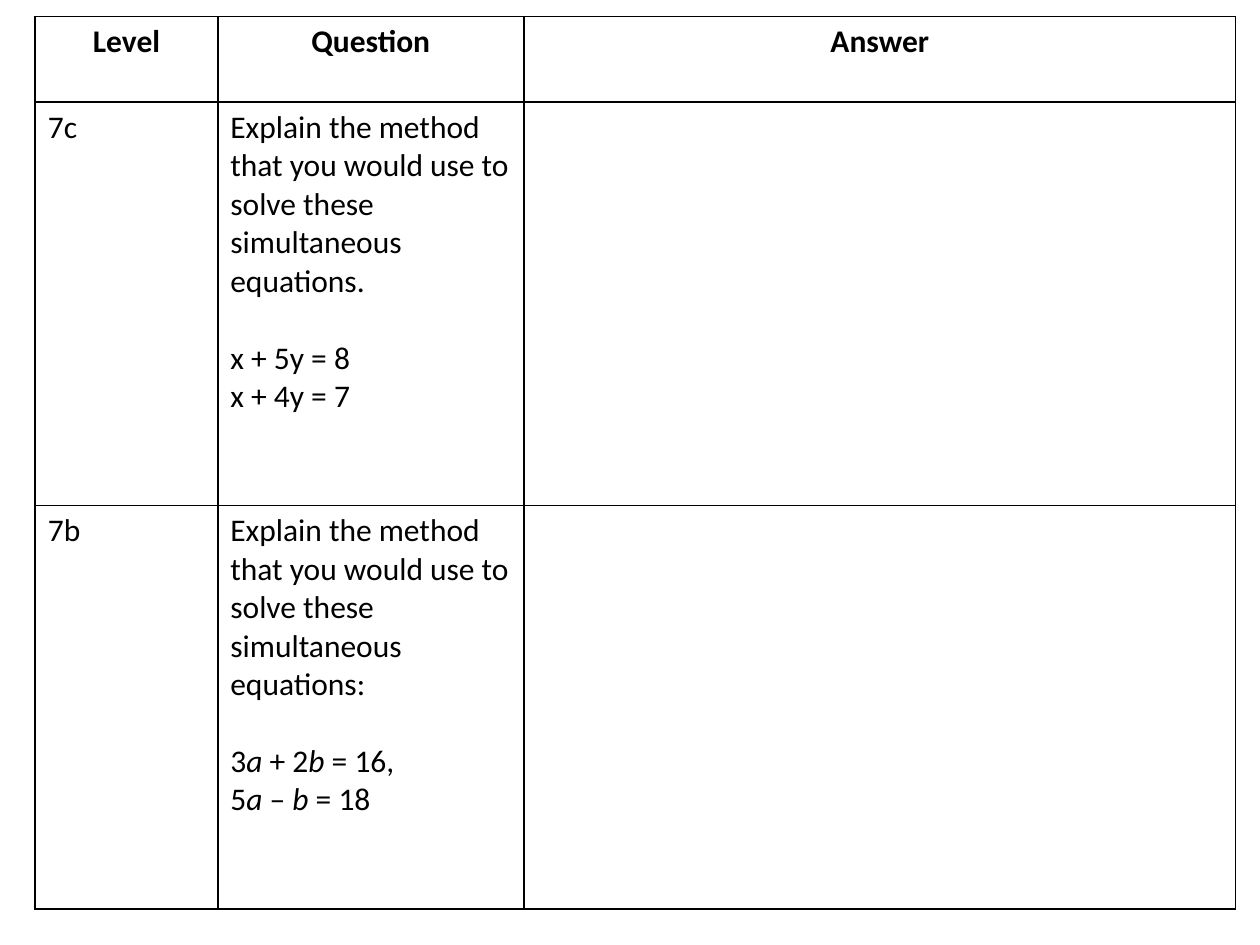
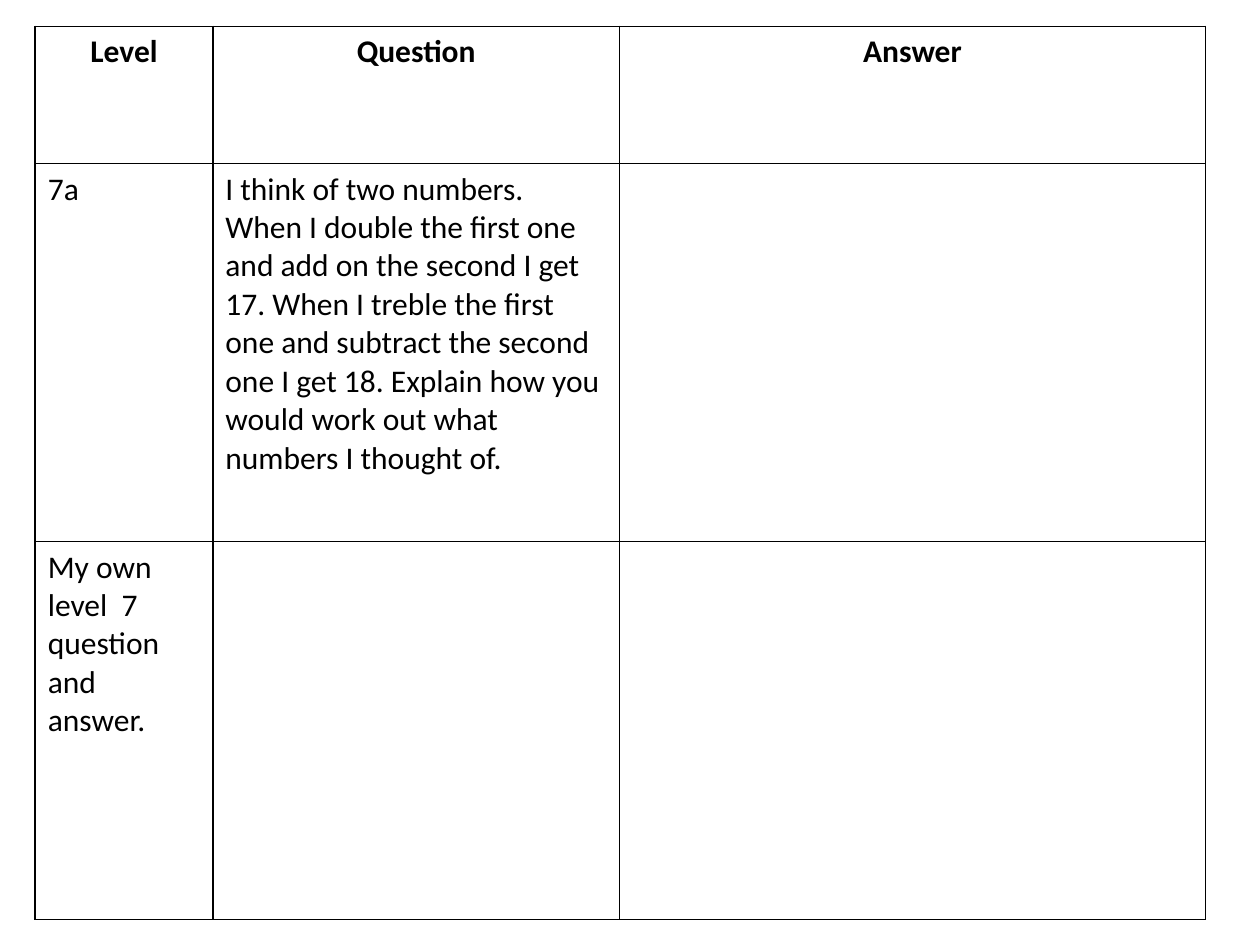
"""Build two level 7 simultaneous equation worksheets, each a question and answer table."""
from lxml.etree import SubElement
from pptx import Presentation
from pptx.dml.color import RGBColor
from pptx.enum.text import PP_ALIGN
from pptx.oxml.ns import qn
from pptx.util import Cm, Pt

COLOURS = {"ink": "000000", "paper": "FFFFFF"}
HEADINGS = ["Level", "Question", "Answer"]
METHOD_PROMPT = "Explain the method that you would use to solve these simultaneous equations"
NUMBER_PUZZLE = (
    "I think of two numbers. When I double the first one and add on the second I get 17. "
    "When I treble the first one and subtract the second one I get 18. "
    "Explain how you would work out what numbers I thought of."
)


class Worksheet:
    def __init__(self, deck):
        self.deck = deck
        self.font = "Calibri"
        self.size = Pt(18)
        self.equation_gap = Pt(22)
        self.border = Pt(1)
        self.slide = None

    def add_slide(self):
        self.slide = self.deck.slides.add_slide(self.deck.slide_layouts[6])

    def add_run(self, paragraph, text, bold=False, italic=False):
        run = paragraph.add_run()
        run.text = text
        run.font.name = self.font
        run.font.size = self.size
        run.font.bold = bold
        run.font.italic = italic
        run.font.color.rgb = RGBColor.from_string(COLOURS["ink"])

    def draw_borders(self, cell):
        properties = cell._tc.get_or_add_tcPr()
        for side in ("lnL", "lnR", "lnT", "lnB"):
            edge = SubElement(properties, qn(f"a:{side}"), w=str(self.border))
            ink = SubElement(edge, qn("a:solidFill"))
            SubElement(ink, qn("a:srgbClr"), val=COLOURS["ink"])

    def fill_cell(self, cell, lines, heading=False):
        self.draw_borders(cell)
        cell.fill.solid()
        cell.fill.fore_color.rgb = RGBColor.from_string(COLOURS["paper"])
        for number, line in enumerate(lines):
            frame = cell.text_frame
            paragraph = frame.add_paragraph() if number else frame.paragraphs[0]
            if heading:
                paragraph.alignment = PP_ALIGN.CENTER
            if number == 1:
                paragraph.space_before = self.equation_gap
            for position, text in enumerate(line):
                self.add_run(paragraph, text, bold=heading, italic=position % 2 == 1)

    def add_questions(self, top, widths, heights, questions):
        """Draw the grid; the runs of a line alternate between upright and italic."""
        grid = self.slide.shapes.add_table(
            len(heights), len(widths), Cm(0.71), Cm(top), Cm(sum(widths)), Cm(sum(heights))
        ).table
        grid.first_row = grid.horz_banding = False
        for column, width in zip(grid.columns, widths):
            column.width = Cm(width)
        for row, height in zip(grid.rows, heights):
            row.height = Cm(height)
        headings = [[[heading]] for heading in HEADINGS]
        for row_number, contents in enumerate([headings, *questions]):
            for column_number, lines in enumerate(contents):
                self.fill_cell(grid.cell(row_number, column_number), lines, row_number == 0)


def main():
    deck = Presentation()
    deck.slide_width, deck.slide_height = Cm(25.4), Cm(19.05)
    sheet = Worksheet(deck)

    sheet.add_slide()
    sheet.add_questions(0.33, [3.68, 6.17, 14.35], [1.73, 8.13, 8.13], [
        [[["7c"]], [[METHOD_PROMPT + "."], ["x + 5y = 8"], ["x + 4y = 7"]], []],
        [
            [["7b"]],
            [
                [METHOD_PROMPT + ":"],
                ["3", "a ", "+ 2", "b", " = 16,"],
                ["5", "a", " – ", "b ", "= 18"],
            ],
            [],
        ],
    ])

    sheet.add_slide()
    sheet.add_questions(0.53, [3.58, 8.2, 11.81], [2.77, 7.62, 7.62], [
        [[["7a"]], [[NUMBER_PUZZLE]], []],
        [[["My own level  7 question and answer."]], [], []],
    ])

    deck.save("out.pptx")


if __name__ == "__main__":
    main()
